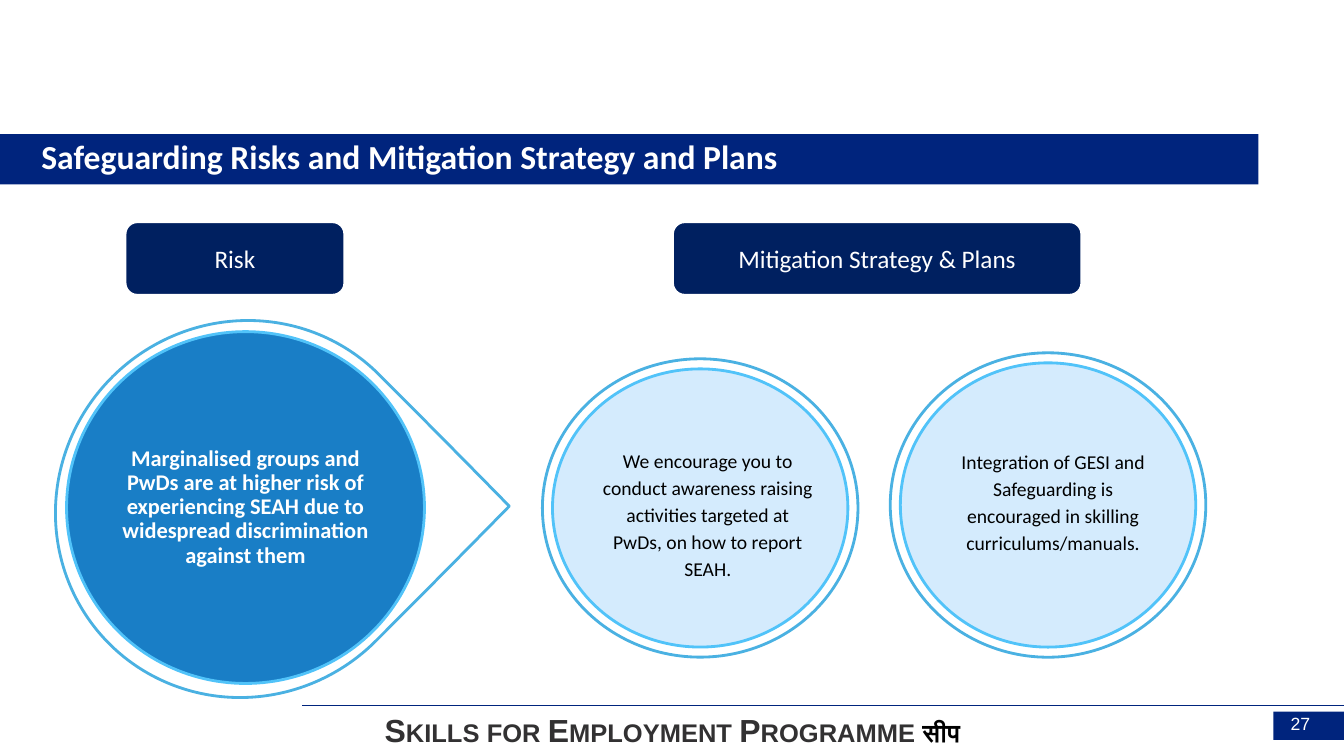
from lxml import etree
from pptx import Presentation
from pptx.dml.color import RGBColor
from pptx.enum.shapes import MSO_CONNECTOR, MSO_SHAPE
from pptx.enum.text import MSO_ANCHOR, PP_ALIGN
from pptx.oxml.ns import qn
from pptx.util import Inches, Pt

RECT, ROUND = MSO_SHAPE.RECTANGLE, MSO_SHAPE.ROUNDED_RECTANGLE
OVAL, TEAR = MSO_SHAPE.OVAL, MSO_SHAPE.TEAR
TOP, MIDDLE, BOTTOM = MSO_ANCHOR.TOP, MSO_ANCHOR.MIDDLE, MSO_ANCHOR.BOTTOM
LEFT, CENTER = PP_ALIGN.LEFT, PP_ALIGN.CENTER

TITLE = "Safeguarding Risks and Mitigation Strategy and Plans"
HEADERS = [
    ("Risk", 1.24, 2.18),
    ("Mitigation Strategy & Plans", 6.67, 4.06),
]
RISK = ("Marginalised groups and PwDs are at higher risk of experiencing SEAH "
        "due to widespread discrimination against them")
PLANS = [
    ("We encourage you to conduct awareness raising activities targeted at "
     "PwDs, on how to report SEAH.",
     (5.38, 3.56, 3.13, 2.96), (5.93, 4.3, 2.18, 1.57)),
    ("Integration of GESI and Safeguarding is encouraged in skilling "
     "curriculums/manuals.",
     (8.83, 3.5, 3.13, 3.02), (9.4, 4.18, 2.09, 1.57)),
]
FOOTER = [("Skills for Employment Programme ", "footer", "grey"),
          ("सीप", "footer_local", "black")]
PAGE = "27"
RING_GAP = 0.1

THEME = {
    "body": "Calibri", "footer_font": "Arial",
    "color": {"bar": "00247D", "header": "002060", "risk": "0070C0",
              "plan": "D0E9FD", "ring": "4AB1E2", "rim": "51C3F9",
              "white": "FFFFFF", "black": "000000", "grey": "323132"},
    "size": {"title": 24, "header": 18, "risk": 16, "plan": 14,
             "page": 12.6, "footer": 22.8, "footer_local": 18.1},
}


def color(name):
    return RGBColor.from_string(THEME["color"][name])


def add_box(s, kind, box, fill, line=None, alpha=None):
    sp = s.shapes.add_shape(kind, *map(Inches, box))
    sp.shadow.inherit = False
    sp.fill.solid()
    sp.fill.fore_color.rgb = color(fill)
    if alpha:
        clr = sp._element.spPr.find(qn("a:solidFill"))[0]
        etree.SubElement(clr, qn("a:alpha")).set("val", str(alpha * 1000))
    if line:
        sp.line.color.rgb = color(line)
        sp.line.width = Pt(2)
    else:
        sp.line.fill.background()
    return sp


def style_run(r, size, ink, font="body", bold=False):
    r.font.name = THEME[font]
    r.font.size = Pt(THEME["size"][size])
    r.font.color.rgb = color(ink)
    r.font.bold = bold


def set_frame(sp, margins, anchor=MIDDLE, align=CENTER):
    tf = sp.text_frame
    tf.word_wrap = True
    tf.vertical_anchor = anchor
    tf.margin_left = tf.margin_right = Inches(margins[0])
    tf.margin_top = tf.margin_bottom = Inches(margins[1])
    p = tf.paragraphs[0]
    p.alignment = align
    return p


def write(sp, text, size, ink, margins=(0.1, 0.05), anchor=MIDDLE,
          align=CENTER, font="body", bold=False, spacing=None):
    p = set_frame(sp, margins, anchor, align)
    p.text = text
    p.line_spacing = spacing
    style_run(p.runs[0], size, ink, font, bold)


def add_text_box(s, box):
    return s.shapes.add_textbox(*map(Inches, box))


def add_footer(s):
    rule = s.shapes.add_connector(MSO_CONNECTOR.STRAIGHT, Inches(3), Inches(7),
                                  Inches(13.33), Inches(7))
    rule.line.color.rgb = color("bar")
    rule.line.width = Pt(0.75)
    etree.SubElement(rule._element.spPr, qn("a:effectLst"))

    add_box(s, RECT, (12.63, 7.06, 0.7, 0.28), "bar")
    write(add_text_box(s, (12.67, 7, 0.66, 0.34)), PAGE, "page", "white",
          (0.13, 0.07), TOP, LEFT, "footer_font")

    p = set_frame(add_text_box(s, (2.82, 7.02, 7.7, 0.48)), (0.13, 0.07), BOTTOM)
    for text, size, ink in FOOTER:
        r = p.add_run()
        r.text = text
        style_run(r, size, ink, "footer_font", True)
    p.runs[0]._r.get_or_add_rPr().set("cap", "small")


def add_title(s):
    add_box(s, RECT, (0, 1.33, 12.48, 0.5), "bar")
    title = s.shapes.title
    title.left, title.top = Inches(0.3), Inches(1.26)
    title.width, title.height = Inches(11.82), Inches(0.55)
    s.shapes._spTree.append(title._element)
    write(title, TITLE, "title", "white", (0.11, 0.06), BOTTOM, LEFT, bold=True)


def add_risk(s):
    drop = add_box(s, TEAR, (0.57, 3.16, 3.7, 3.78), "white", "ring")
    drop.adjustments[0] = 0.995
    drop.rotation = 45
    disc = add_box(s, OVAL, (0.66, 3.29, 3.55, 3.49), "risk", "rim", 90)
    write(disc, RISK, "risk", "white", (0, 0), bold=True, spacing=0.9)


def add_plan(s, text, ring, text_box):
    left, top, width, height = ring
    add_box(s, OVAL, ring, "white", "ring")
    add_box(s, OVAL, (left + RING_GAP, top + RING_GAP, width - 2 * RING_GAP,
                      height - 2 * RING_GAP), "plan", "rim", 90)
    write(add_text_box(s, text_box), text, "plan", "black", (0.02, 0.02),
          spacing=1.15)


def main():
    prs = Presentation()
    prs.slide_width, prs.slide_height = Inches(13.33), Inches(7.5)
    s = prs.slides.add_slide(prs.slide_layouts[5])
    add_footer(s)
    add_title(s)
    add_risk(s)
    for plan in PLANS:
        add_plan(s, *plan)
    for text, left, width in HEADERS:
        sp = add_box(s, ROUND, (left, 2.2, width, 0.73), "header", "white")
        write(sp, text, "header", "white")
    prs.save("out.pptx")


if __name__ == "__main__":
    main()
